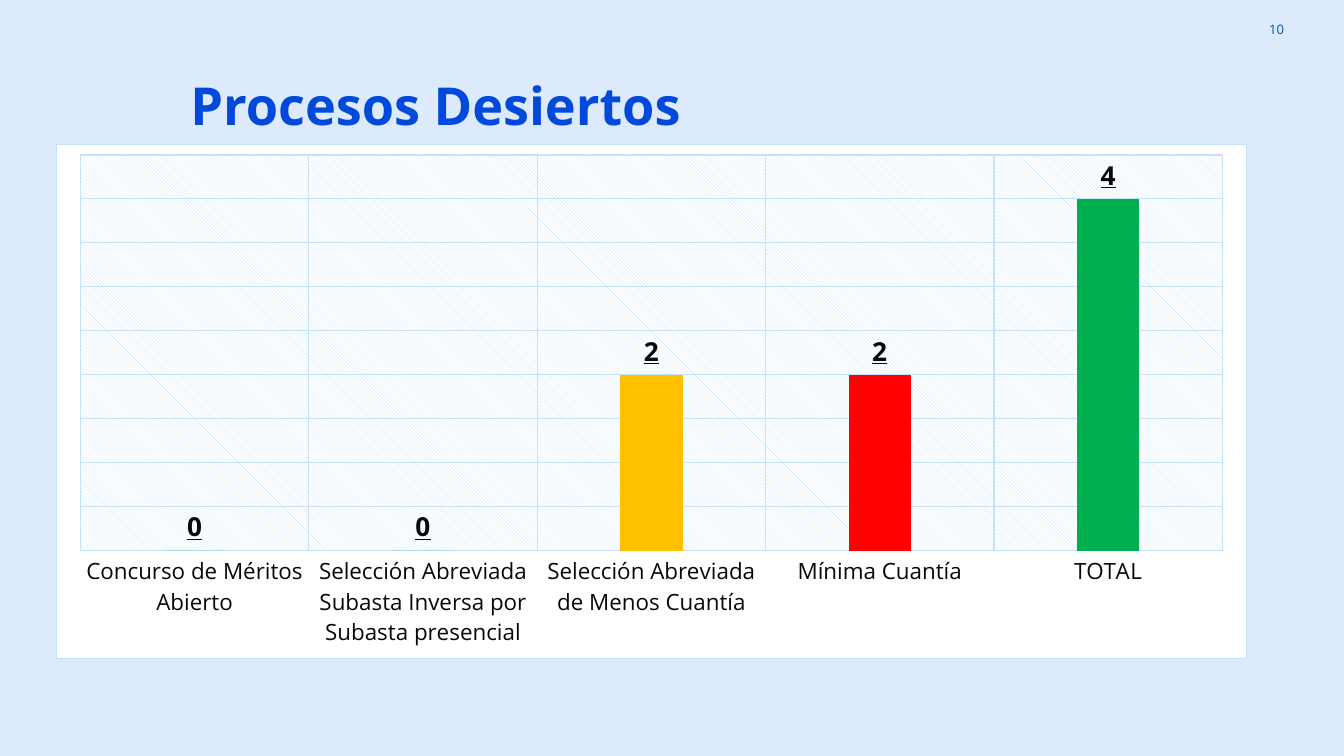
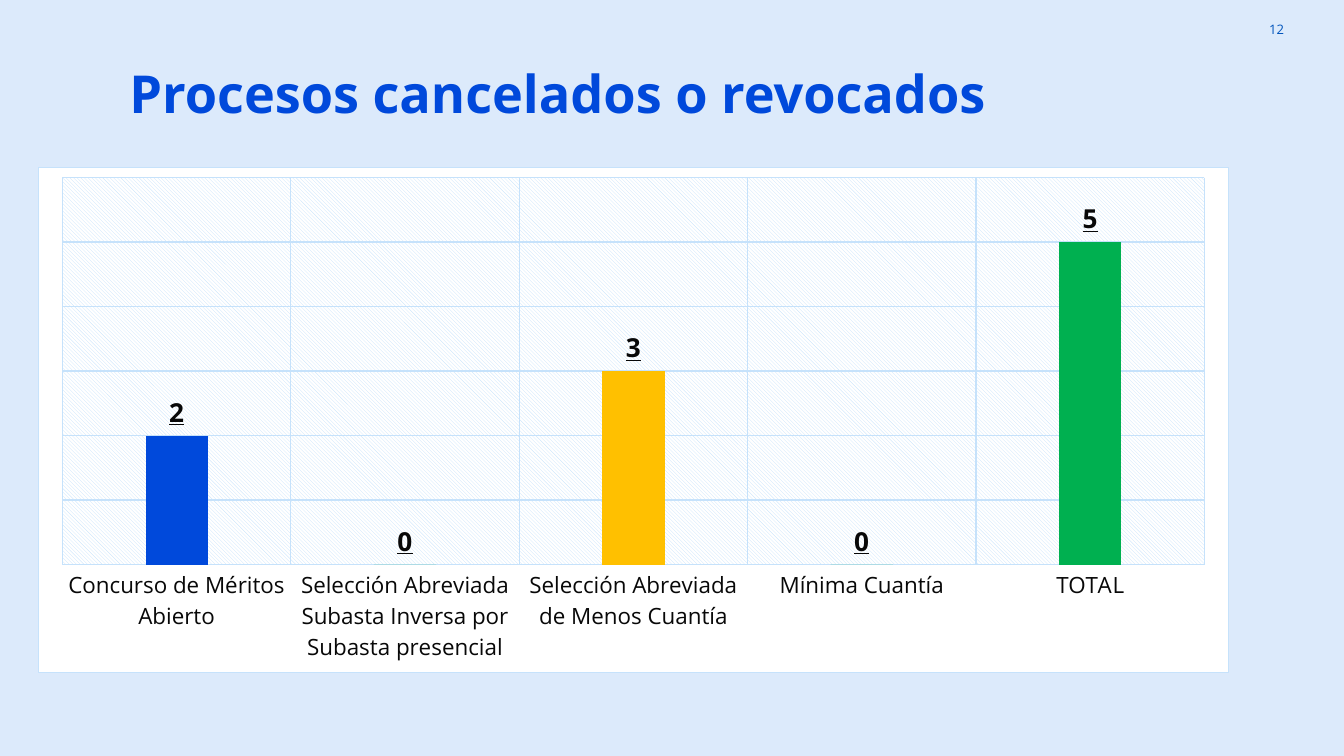
from dataclasses import dataclass

from lxml.etree import fromstring
from pptx import Presentation
from pptx.chart.data import CategoryChartData
from pptx.dml.color import RGBColor
from pptx.enum.chart import XL_CHART_TYPE, XL_LABEL_POSITION, XL_TICK_MARK
from pptx.enum.text import MSO_ANCHOR, MSO_AUTO_SIZE, PP_ALIGN
from pptx.oxml.ns import qn
from pptx.util import Pt


@dataclass(frozen=True)
class Theme:
    """Colours, fonts and type sizes shared by the slides."""
    background: str = "DCEAFB"
    panel: str = "FFFFFF"
    grid: str = "C6E2FB"
    title: str = "0049DB"
    page: str = "0054BC"
    ink: str = "080808"
    chart_text: str = "073763"
    blue: str = "0049DB"
    amber: str = "FFC000"
    red: str = "FF0000"
    green: str = "00B050"
    font: str = "Open Sans"
    chart_font: str = "Arial"
    title_size: int = 28
    page_size: int = 7
    chart_size: int = 10
    category_size: int = 12
    value_size: int = 14
    line_width: float = 0.75


THEME = Theme()
PAGE_BOX = (1216, 0, 81, 58)
CATEGORIES = (
    "Concurso de Méritos Abierto",
    "Selección Abreviada Subasta Inversa por Subasta presencial",
    "Selección Abreviada de Menos Cuantía",
    "Mínima Cuantía",
    "TOTAL",
)
SLIDES = (
    dict(page="10", title="Procesos Desiertos", title_box=(177, 67, 524, 77),
         chart_box=(56, 144, 1191, 515), values=(0, 0, 2, 2, 4),
         colors={2: THEME.amber, 3: THEME.red}, top=4.5, step=0.5),
    dict(page="12", title="Procesos cancelados o revocados", title_box=(116, 55, 986, 77),
         chart_box=(38, 167, 1191, 506), values=(2, 0, 3, 0, 5),
         colors={0: THEME.blue, 2: THEME.amber}, top=6, step=1),
)


def px(n):
    """Turn pixels into EMU."""
    return round(n * 914400 / 134.4)


def rgb(color):
    """Turn a hex string into a colour."""
    return RGBColor.from_string(color)


def set_font(font, size, color, name=THEME.font, bold=False, underline=False):
    """Format a font."""
    font.size, font.name = Pt(size), name
    font.bold, font.underline = bold, underline
    font.color.rgb = rgb(color)


def write(sp, text, align=PP_ALIGN.LEFT, anchor=MSO_ANCHOR.TOP, grow=False, inset=None, **font):
    """Put one formatted line of text into a shape."""
    tf = sp.text_frame
    tf.word_wrap = True
    tf.vertical_anchor = anchor
    tf.auto_size = MSO_AUTO_SIZE.SHAPE_TO_FIT_TEXT if grow else MSO_AUTO_SIZE.NONE
    if inset is not None:
        tf.margin_left = tf.margin_right = tf.margin_top = tf.margin_bottom = px(inset)
    p = tf.paragraphs[0]
    p.alignment = align
    r = p.add_run()
    r.text = text
    set_font(r.font, **font)


def add_title(s, box, text):
    """Place the title placeholder in its box."""
    sp = s.shapes.title
    sp.left, sp.top, sp.width, sp.height = map(px, box)
    write(sp, text, grow=True, size=THEME.title_size, color=THEME.title, bold=True)


def add_page_number(s, box, text):
    """Place the page number in its box."""
    sp = s.shapes.add_textbox(*map(px, box))
    write(sp, text, align=PP_ALIGN.RIGHT, anchor=MSO_ANCHOR.MIDDLE, inset=13,
          size=THEME.page_size, color=THEME.page)


def set_line(line):
    """Give a line the grid style."""
    line.color.rgb = rgb(THEME.grid)
    line.width = Pt(THEME.line_width)


def area_style(fill, line):
    """Build the shape properties of a chart area."""
    return fromstring(
        '<c:spPr xmlns:c="http://schemas.openxmlformats.org/drawingml/2006/chart" '
        'xmlns:a="http://schemas.openxmlformats.org/drawingml/2006/main">'
        f'{fill}{line}</c:spPr>')


def style_areas(chart):
    """Fill the chart panel and hatch its plot area."""
    fore, back = (f'<a:srgbClr val="{c}"/>' for c in (THEME.grid, THEME.panel))
    border = f'<a:ln w="{Pt(THEME.line_width)}"><a:solidFill>{fore}</a:solidFill></a:ln>'
    hatch = (f'<a:pattFill prst="ltDnDiag"><a:fgClr>{fore}</a:fgClr>'
             f'<a:bgClr>{back}</a:bgClr></a:pattFill>')
    body = chart.element.find(qn("c:chart"))
    body.addnext(area_style(f"<a:solidFill>{back}</a:solidFill>", border))
    body.find(qn("c:plotArea")).append(area_style(hatch, "<a:ln><a:noFill/></a:ln>"))


def style_axes(chart, top, step):
    """Format the category axis and the hidden value axis."""
    cat, val = chart.category_axis, chart.value_axis
    for axis in (cat, val):
        axis.has_major_gridlines = True
        set_line(axis.major_gridlines.format.line)
        axis.major_tick_mark = axis.minor_tick_mark = XL_TICK_MARK.NONE
    set_line(cat.format.line)
    set_font(cat.tick_labels.font, THEME.category_size, THEME.ink)
    val.visible = False
    val.minimum_scale, val.maximum_scale, val.major_unit = 0, top, step


def style_series(plot, colors):
    """Format the columns and their value labels."""
    plot.gap_width, plot.overlap, plot.vary_by_categories = 267, -43, False
    series = plot.series[0]
    series.invert_if_negative = False
    series.format.fill.solid()
    series.format.fill.fore_color.rgb = rgb(THEME.green)
    for i, color in colors.items():
        fill = series.points[i].format.fill
        fill.solid()
        fill.fore_color.rgb = rgb(color)
    labels = series.data_labels
    labels.show_value = True
    labels.position = XL_LABEL_POSITION.OUTSIDE_END
    labels.number_format, labels.number_format_is_linked = "0", False
    set_font(labels.font, THEME.value_size, THEME.ink, bold=True, underline=True)


def add_column_chart(s, box, values, colors, top, step):
    """Place the column chart in its box."""
    data = CategoryChartData(number_format="0")
    data.categories = CATEGORIES
    data.add_series("Series 1", values)
    chart = s.shapes.add_chart(XL_CHART_TYPE.COLUMN_CLUSTERED, *map(px, box), data).chart
    chart.has_legend = chart.has_title = False
    set_font(chart.font, THEME.chart_size, THEME.chart_text, name=THEME.chart_font)
    style_axes(chart, top, step)
    style_series(chart.plots[0], colors)
    style_areas(chart)


def add_chart_slide(prs, page, title, title_box, chart_box, **chart):
    """Add a slide with a title, a page number and a column chart."""
    s = prs.slides.add_slide(prs.slide_layouts[5])
    add_page_number(s, PAGE_BOX, page)
    add_column_chart(s, chart_box, **chart)
    add_title(s, title_box, title)


def main():
    """Build and save the presentation."""
    prs = Presentation()
    prs.slide_width, prs.slide_height = px(1344), px(756)
    fill = prs.slide_master.background.fill
    fill.solid()
    fill.fore_color.rgb = rgb(THEME.background)
    for content in SLIDES:
        add_chart_slide(prs, **content)
    prs.save("out.pptx")


if __name__ == "__main__":
    main()
